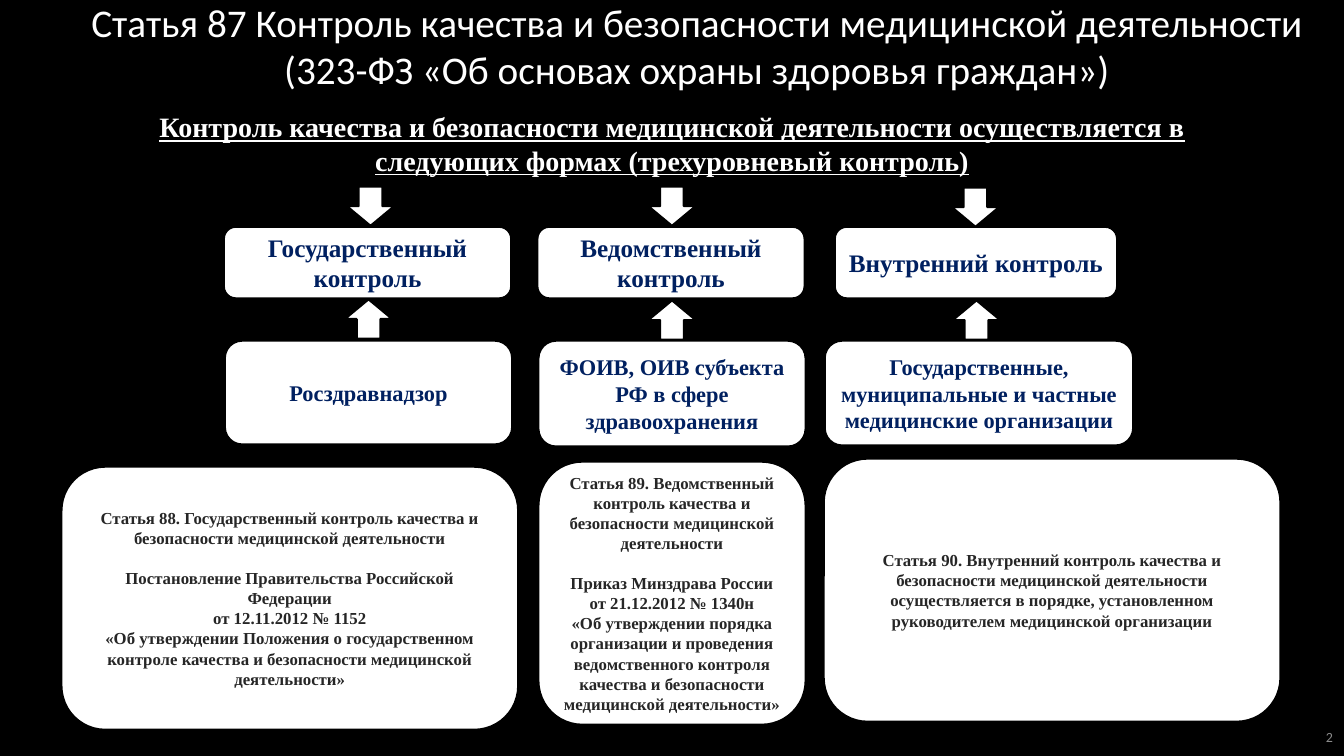
from pptx import Presentation
from pptx import util as u
from pptx.dml.color import RGBColor
from pptx.enum import shapes, text

SERIF, SANS = "Times New Roman", "Calibri"
BLACK, WHITE, NAVY, DARK, GREY = "000000", "FFFFFF", "002060", "262626", "8C8C8C"


def paint(target, colour):
    """Give a fill, or a font or line colour, its hex colour."""
    if hasattr(target, "solid"):
        target.solid()
        target = target.fore_color
    target.rgb = RGBColor.from_string(colour)


def write(frame, paragraphs, size, colour, font=SERIF, bold=True, underline=None,
          align=text.PP_ALIGN.CENTER, anchor=text.MSO_ANCHOR.MIDDLE):
    """Write (text, space before) pairs; a newline in a text is a line break."""
    frame.word_wrap = True
    frame.auto_size = text.MSO_AUTO_SIZE.NONE
    frame.vertical_anchor = anchor
    for index, (words, gap) in enumerate(paragraphs):
        para = frame.paragraphs[0] if index == 0 else frame.add_paragraph()
        para.alignment = align
        para.space_before = u.Pt(gap)
        for number, line in enumerate(words.split("\n")):
            if number:
                para.add_line_break()
            span = para.add_run()
            span.text = line
            span.font.name, span.font.size = font, u.Pt(size)
            span.font.bold, span.font.underline = bold, underline
            paint(span.font.color, colour)


class ControlSlide:
    def __init__(self, deck):
        self.page = deck.slides.add_slide(deck.slide_layouts[5])
        paint(self.page.background.fill, BLACK)

    def title(self, place, words):
        box = self.page.shapes.title
        box.left, box.top, box.width, box.height = map(u.Inches, place)
        write(box.text_frame, [(words, 0)], 28, WHITE, font=SANS, bold=False,
              anchor=text.MSO_ANCHOR.TOP)

    def label(self, place, words, size, colour, **style):
        box = self.page.shapes.add_textbox(*map(u.Inches, place))
        write(box.text_frame, [(words, 0)], size, colour, **style)

    def shape(self, kind, place):
        box = self.page.shapes.add_shape(kind, *map(u.Inches, place))
        box.shadow.inherit = False
        paint(box.fill, WHITE)
        paint(box.line.color, BLACK)
        box.line.width = u.Pt(1.5)
        return box

    def card(self, place, paragraphs, size, colour):
        box = self.shape(shapes.MSO_SHAPE.ROUNDED_RECTANGLE, place)
        write(box.text_frame, paragraphs, size, colour)

    def arrow(self, left, top, rotation=0):
        box = self.shape(shapes.MSO_SHAPE.DOWN_ARROW, (left, top, 0.47, 0.39))
        box.rotation = rotation


# Each level: control form, responsible body, legal basis, arrows
GAP = 13.8  # one empty 12 pt line
LEVELS = [
    dict(form=((2.22, 2.25, 2.85, 0.71), "Государственный контроль"),
         body=((2.23, 3.38, 2.85, 1.03), "Росздравнадзор"),
         law=((0.61, 4.63, 4.53, 2.61), [
             ("Статья 88. Государственный контроль качества и безопасности "
              "медицинской деятельности", 0),
             ("Постановление Правительства Российской Федерации", GAP),
             ("от 12.11.2012 № 1152\n«Об утверждении Положения о государственном "
              "контроле качества и безопасности медицинской деятельности»", 0)]),
         down=(3.44, 1.85), up=(3.42, 2.97)),
    dict(form=((5.33, 2.25, 2.65, 0.71), "Ведомственный контроль"),
         body=((5.34, 3.38, 2.65, 1.05),
               "ФОИВ, ОИВ субъекта РФ в сфере здравоохранения"),
         law=((5.34, 4.58, 2.65, 2.61), [
             ("Статья 89. Ведомственный контроль качества и безопасности "
              "медицинской деятельности", 0),
             ("Приказ Минздрава России", GAP),
             ("от 21.12.2012 № 1340н", 0),
             ("«Об утверждении порядка организации и проведения ведомственного "
              "контроля качества и безопасности медицинской деятельности»", 0)]),
         down=(6.43, 1.85), up=(6.43, 2.98)),
    dict(form=((8.28, 2.25, 2.8, 0.71), "Внутренний контроль"),
         body=((8.18, 3.38, 3.06, 1.04),
               "Государственные, муниципальные и частные медицинские организации"),
         law=((8.17, 4.55, 4.53, 2.61), [
             ("Статья 90. Внутренний контроль качества и безопасности "
              "медицинской деятельности", 0),
             ("осуществляется в порядке, установленном руководителем "
              "медицинской организации", 0)]),
         down=(9.44, 1.86), up=(9.45, 2.98)),
]


def main():
    deck = Presentation()
    deck.slide_width, deck.slide_height = u.Inches(13.33), u.Inches(7.5)
    slide = ControlSlide(deck)

    # Headings
    slide.title((0.37, -0.07, 13.08, 1.04),
                "Статья 87 Контроль качества и безопасности медицинской деятельности "
                "(323-ФЗ «Об основах охраны здоровья граждан»)")
    slide.label((1.32, 1.04, 10.69, 0.77),
                "Контроль качества и безопасности медицинской деятельности "
                "осуществляется в следующих формах (трехуровневый контроль)",
                20, WHITE, underline=True, anchor=text.MSO_ANCHOR.TOP)

    # Three levels of control
    for level in LEVELS:
        for part, size, colour in (("form", 18, NAVY), ("body", 16, NAVY)):
            place, words = level[part]
            slide.card(place, [(words, 0)], size, colour)
        slide.card(*level["law"], 12, DARK)
        slide.arrow(*level["down"])
        slide.arrow(*level["up"], rotation=180)

    # Page number
    slide.label((10.32, 7.11, 3, 0.4), "2", 10, GREY, font=SANS, bold=False,
                align=text.PP_ALIGN.RIGHT)
    deck.save("out.pptx")


if __name__ == "__main__":
    main()
